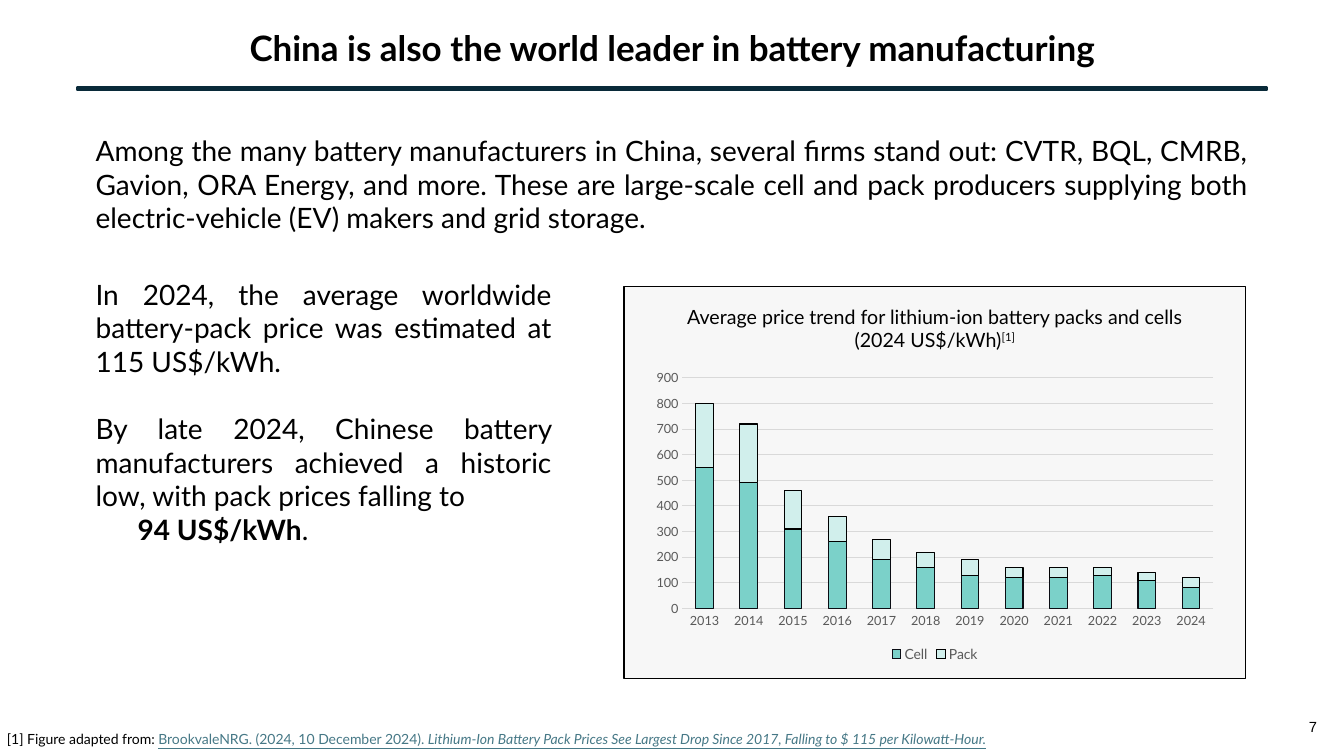
from dataclasses import dataclass

from pptx import Presentation
from pptx.chart.data import CategoryChartData
from pptx.dml.color import RGBColor
from pptx.enum.chart import XL_CHART_TYPE, XL_LEGEND_POSITION, XL_TICK_MARK
from pptx.enum.shapes import MSO_SHAPE
from pptx.enum.text import MSO_ANCHOR, MSO_AUTO_SIZE, PP_ALIGN
from pptx.util import Pt

TITLE = "China is also the world leader in battery manufacturing"
INTRO = ["Among the many battery manufacturers in China, several firms stand out: "
         "CVTR, BQL, CMRB, Gavion, ORA Energy, and more. These are large-scale cell and pack "
         "producers supplying both electric-vehicle (EV) makers and grid storage."]
PRICES = [
    "In 2024, the average worldwide battery-pack price was estimated at 115 US$/kWh.",
    "By late 2024, Chinese battery manufacturers achieved a historic low, "
    "with pack prices falling to",
]
RECORD_LOW = [("94 US$/kWh", {"bold": True}), (".", {})]
CHART_TITLE = [
    ("Average price trend for lithium-ion battery packs and cells (2024 US$/kWh)", {}),
    ("[1]", {"raised": True}),
]
YEARS = [str(year) for year in range(2013, 2025)]
CELL = [550, 490, 310, 260, 190, 160, 130, 120, 120, 130, 110, 80]
PACK = [250, 230, 150, 100, 80, 60, 60, 40, 40, 30, 30, 40]
SOURCE_TITLE = ("Lithium-Ion Battery Pack Prices See Largest Drop Since 2017, "
                "Falling to $ 115 per Kilowatt-Hour.")
PAGE_NUMBER = "7"


@dataclass(frozen=True)
class Theme:
    """Colours, fonts and type sizes of the slide."""
    font: str = "Lato"
    number_font: str = "Arial"
    ink: str = "000000"
    rule: str = "092A39"
    panel: str = "F7F7F7"
    link: str = "467886"
    axis: str = "595959"
    grid: str = "D9D9D9"
    cell: str = "7BD1C9"
    cell_edge: str = "0A0D14"
    pack: str = "D1EFEC"
    title: float = 25
    body: float = 20
    caption: float = 14
    note: float = 10
    tick: float = 9
    number: float = 10.5


THEME = Theme()
LINK = {"color": THEME.link, "underline": True}
SOURCE = [
    ("[1] Figure adapted from: ", {}),
    ("BrookvaleNRG. (2024, 10 December 2024). ", LINK),
    (SOURCE_TITLE, {**LINK, "italic": True}),
]
SLIDE_WIDTH, SLIDE_HEIGHT = 960, 540
MARGIN = 61.2
INDENT = 30
PARAGRAPH_GAP = 24
PANEL = (445.7, 204.5, 444.2, 280)
INSET = 15


def color(value):
    """Return a colour from its hex value."""
    return RGBColor.from_string(value)


def style_font(font, size, ink=THEME.ink, name=THEME.font):
    """Set the size, colour and typeface of a font."""
    font.size = Pt(size)
    font.name = name
    font.color.rgb = color(ink)


def write(box, paragraphs, size=THEME.body, name=THEME.font, bold=False,
          align=PP_ALIGN.JUSTIFY, anchor=MSO_ANCHOR.TOP, gap=0):
    """Fill a box with paragraphs, each a string or a list of spans."""
    frame = box.text_frame
    frame.word_wrap = True
    frame.auto_size = MSO_AUTO_SIZE.NONE
    frame.vertical_anchor = anchor
    for index, spans in enumerate(paragraphs):
        para = frame.add_paragraph() if index else frame.paragraphs[0]
        para.alignment = align
        para.space_before = Pt(gap if index else 0)
        for text, look in [(spans, {})] if isinstance(spans, str) else spans:
            span = para.add_run()
            span.text = text
            style_font(span.font, size, look.get("color", THEME.ink), name)
            span.font.bold = look.get("bold", bold)
            span.font.italic = look.get("italic", False)
            span.font.underline = look.get("underline", False)
            if look.get("raised"):
                span.font._element.set("baseline", "30000")
    return frame


def add_text(page, place, paragraphs, **look):
    """Add a text box and return its text frame."""
    return write(page.shapes.add_textbox(*map(Pt, place)), paragraphs, **look)


def add_block(page, place, fill, line, weight):
    """Add a filled and outlined rectangle."""
    block = page.shapes.add_shape(MSO_SHAPE.RECTANGLE, *map(Pt, place))
    block.shadow.inherit = False
    block.fill.solid()
    block.fill.fore_color.rgb = color(fill)
    block.line.color.rgb = color(line)
    block.line.width = Pt(weight)


def add_price_chart(page, place):
    """Add the stacked columns of cell and pack prices."""
    data = CategoryChartData()
    data.categories = YEARS
    data.add_series("Cell", CELL)
    data.add_series("Pack", PACK)
    chart = page.shapes.add_chart(
        XL_CHART_TYPE.COLUMN_STACKED, *map(Pt, place), data).chart
    style_font(chart.font, THEME.note)
    chart.has_title = False
    chart.has_legend = True
    chart.legend.position = XL_LEGEND_POSITION.BOTTOM
    chart.legend.include_in_layout = False
    style_font(chart.legend.font, THEME.note, THEME.axis)
    plot = chart.plots[0]
    plot.gap_width, plot.overlap = 150, 100
    plot.vary_by_categories = False
    looks = [(THEME.cell, THEME.cell_edge), (THEME.pack, THEME.ink)]
    for series, (fill, edge) in zip(plot.series, looks):
        series.format.fill.solid()
        series.format.fill.fore_color.rgb = color(fill)
        series.format.line.color.rgb = color(edge)
        series.format.line.width = Pt(0.75)
    years, prices = chart.category_axis, chart.value_axis
    for axis in (years, prices):
        axis.major_tick_mark = axis.minor_tick_mark = XL_TICK_MARK.NONE
        style_font(axis.tick_labels.font, THEME.tick, THEME.axis)
    prices.minimum_scale, prices.maximum_scale, prices.major_unit = 0, 900, 100
    prices.format.line.fill.background()
    prices.has_major_gridlines = True
    for line in (years.format.line, prices.major_gridlines.format.line):
        line.color.rgb = color(THEME.grid)
        line.width = Pt(0.75)


def main():
    """Build and save the slide."""
    deck = Presentation()
    deck.slide_width, deck.slide_height = Pt(SLIDE_WIDTH), Pt(SLIDE_HEIGHT)
    page = deck.slides.add_slide(deck.slide_layouts[5])

    title = page.shapes.title
    title.left, title.top, title.width, title.height = map(Pt, (0, 15, SLIDE_WIDTH, 37.5))
    write(title, [TITLE], size=THEME.title, bold=True,
          align=PP_ALIGN.CENTER, anchor=MSO_ANCHOR.MIDDLE)
    add_block(page, (55, 62.5, 850, 1.5), THEME.ink, THEME.rule, 1.5)

    add_text(page, (MARGIN, 92, 837.4, 80), INTRO)
    prices = add_text(page, (MARGIN, 194.4, 340, 201), [*PRICES, RECORD_LOW],
                      gap=PARAGRAPH_GAP)
    record = prices.paragraphs[-1]
    record.space_before = Pt(0)
    record._p.get_or_add_pPr().set("marL", str(Pt(INDENT)))

    left, top, width, height = PANEL
    add_block(page, PANEL, THEME.panel, THEME.ink, 1)
    add_price_chart(page, (left + INSET, top + 55.5, width - 2 * INSET, 216))
    add_text(page, (left + 23, top + 9.5, width - 46, 41), [CHART_TITLE],
             size=THEME.caption, align=PP_ALIGN.CENTER)

    source = add_text(page, (0, 518.4, 857, 19.4), [SOURCE],
                      size=THEME.note, align=PP_ALIGN.LEFT)
    source.margin_left = Pt(5)
    add_text(page, (921.6, 508.3, 32.4, 21.6), [PAGE_NUMBER], size=THEME.number,
             name=THEME.number_font, align=PP_ALIGN.CENTER, anchor=MSO_ANCHOR.MIDDLE)
    deck.save("out.pptx")


if __name__ == "__main__":
    main()
